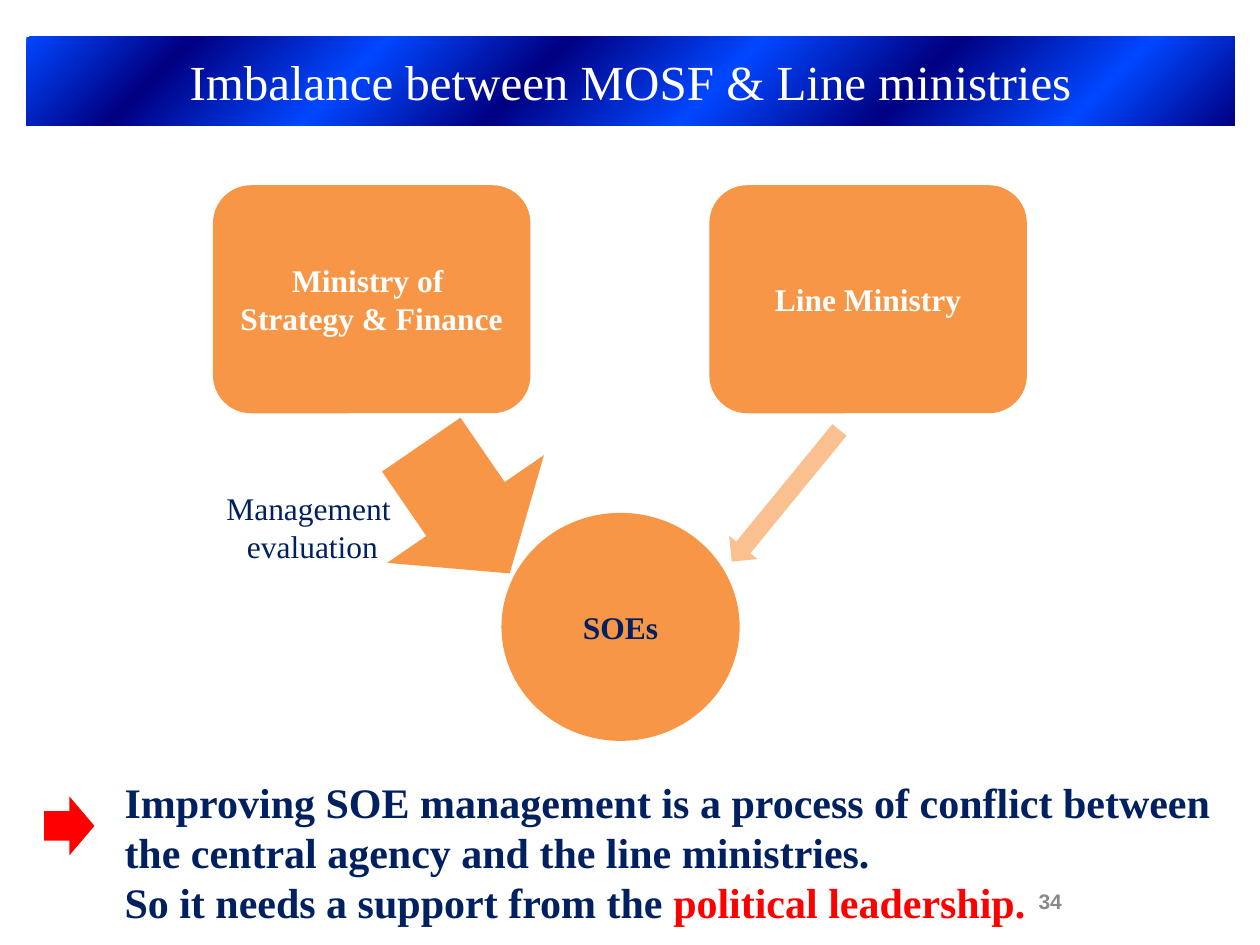
from pptx import Presentation
from pptx.dml.color import RGBColor
from pptx.enum.shapes import MSO_SHAPE
from pptx.enum.text import MSO_ANCHOR, PP_ALIGN
from pptx.oxml import parse_xml
from pptx.oxml.ns import nsdecls
from pptx.util import Inches, Pt

ROUND, OVAL = MSO_SHAPE.ROUNDED_RECTANGLE, MSO_SHAPE.FLOWCHART_CONNECTOR
DOWN, RIGHT = MSO_SHAPE.DOWN_ARROW, MSO_SHAPE.RIGHT_ARROW
MIDDLE, TOP = MSO_ANCHOR.MIDDLE, MSO_ANCHOR.TOP
LEFT, CENTER = PP_ALIGN.LEFT, PP_ALIGN.CENTER

WHITE = RGBColor(0xFF, 0xFF, 0xFF)
NAVY = RGBColor(0x00, 0x20, 0x60)
ORANGE = RGBColor(0xF7, 0x96, 0x46)
PEACH = RGBColor(0xFA, 0xC0, 0x90)
RED = RGBColor(0xFF, 0x00, 0x00)
GRAY = RGBColor(0x89, 0x89, 0x89)
DEEP, BRIGHT = RGBColor(0x00, 0x00, 0x82), RGBColor(0x00, 0x47, 0xFF)
SERIF, SANS = "Times New Roman", "Arial"


def write(shape, lines, size, color, bold=False, name=SERIF, align=CENTER, anchor=MIDDLE):
    """Fill a shape with lines, each a list of (text, color or None) runs."""
    frame = shape.text_frame
    frame.word_wrap = True
    frame.vertical_anchor = anchor
    for i, line in enumerate(lines):
        para = frame.paragraphs[0] if i == 0 else frame.add_paragraph()
        para.alignment = align
        for text, tint in line:
            run = para.add_run()
            run.text = text
            looks = {"size": Pt(size), "bold": bold, "name": name}
            for key, value in looks.items():
                setattr(run.font, key, value)
            run.font.color.rgb = tint or color


prs = Presentation()
prs.slide_width, prs.slide_height = Inches(10), Inches(7.5)
slide = prs.slides.add_slide(prs.slide_layouts[5])

# Title banner with a striped gradient
title = slide.shapes.title
place = {"left": 0.21, "top": 0.29, "width": 9.59, "height": 0.71}
for key, value in place.items():
    setattr(title, key, Inches(value))
stops = "".join(
    f'<a:gs pos="{pos * 1000}"><a:srgbClr val="{BRIGHT if i % 2 else DEEP}"/></a:gs>'
    for i, pos in enumerate([0, 13, 28, 43, 58, 72, 87, 100])
)
title._element.spPr.append(parse_xml(
    f'<a:gradFill {nsdecls("a")} rotWithShape="1"><a:gsLst>{stops}</a:gsLst>'
    '<a:path path="circle"><a:fillToRect l="100000" t="100000"/></a:path></a:gradFill>'
))
write(title, [[("Imbalance between MOSF & Line ministries", None)]], 28, WHITE)

# Ministries, SOEs and arrows: kind, place, turn, fill, lines, text color
parts = [
    (OVAL, (3.98, 4.07, 1.89, 1.81), 0, ORANGE, ["SOEs"], NAVY),
    (ROUND, (1.69, 1.47, 2.52, 1.81), 0, ORANGE, ["Ministry of ", "Strategy & Finance"], WHITE),
    (DOWN, (2.94, 3.42, 1.51, 1.24), 325.5, ORANGE, [], WHITE),
    (DOWN, (6.09, 3.26, 0.29, 1.35), 39.3, PEACH, [], WHITE),
    (ROUND, (5.63, 1.47, 2.52, 1.81), 0, ORANGE, ["Line Ministry"], WHITE),
    (RIGHT, (0.35, 6.32, 0.4, 0.47), 0, RED, [], WHITE),
]
for kind, box, turn, fill, lines, color in parts:
    shape = slide.shapes.add_shape(kind, *map(Inches, box))
    shape.shadow.inherit = False
    shape.rotation = turn
    shape.fill.solid()
    shape.fill.fore_color.rgb = fill
    shape.line.fill.background()
    if kind == OVAL:
        shape.text_frame.margin_left = shape.text_frame.margin_right = 0
    write(shape, [[(line, None)] for line in lines], 18, color, bold=True)

# Arrow label, slide number and conclusion
notes = [
    ((1.69, 3.83, 1.58, 0.71), [[("Management ", None)], [("evaluation", None)]],
     {"size": 18, "color": NAVY, "anchor": TOP}),
    ((7.17, 6.95, 2.33, 0.4), [[("34", None)]],
     {"size": 12, "color": GRAY, "bold": True, "name": SANS}),
    ((0.89, 6.11, 8.83, 1.31), [
        [("Improving SOE management is a process of conflict between", None)],
        [("the central agency and the line ministries.", None)],
        [("So it needs a support from the ", None), ("political leadership.", RED)],
    ], {"size": 24, "color": NAVY, "bold": True, "align": LEFT, "anchor": TOP}),
]
for box, lines, looks in notes:
    write(slide.shapes.add_textbox(*map(Inches, box)), lines, **looks)

prs.save("out.pptx")
